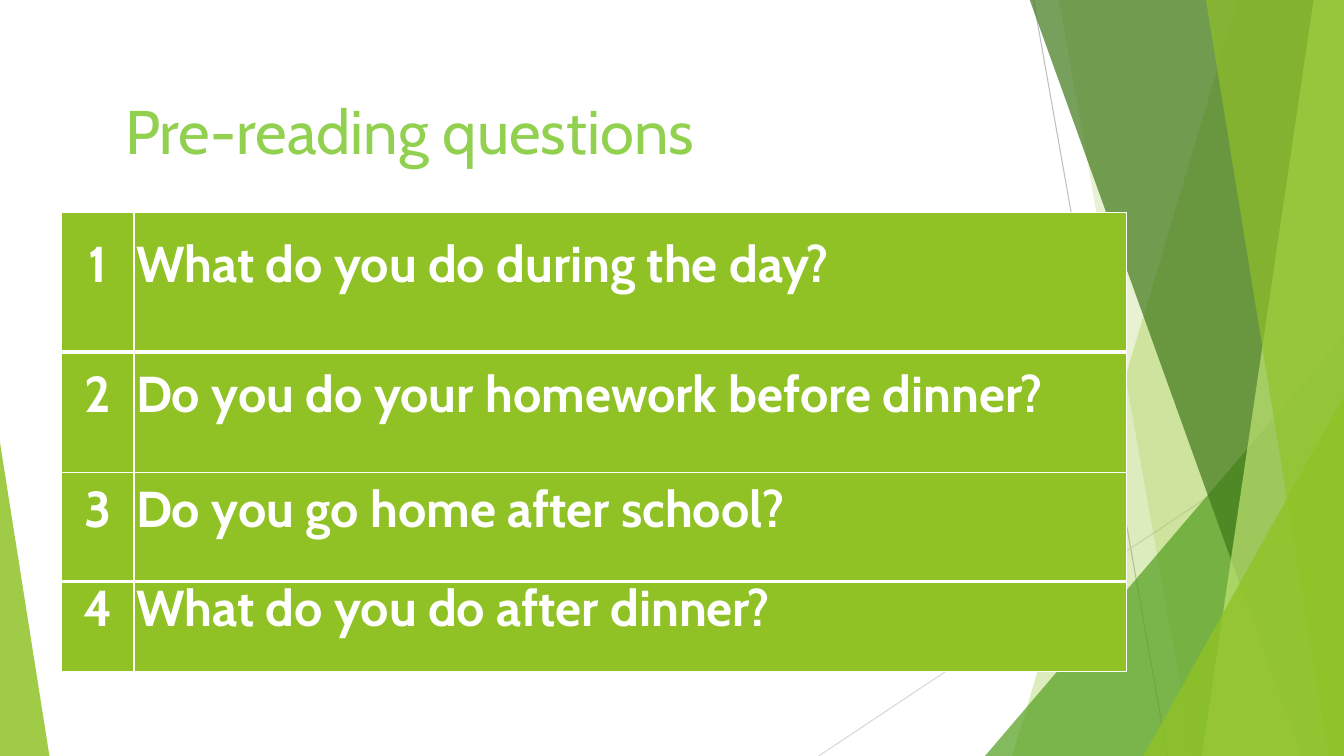
from dataclasses import dataclass

from lxml.etree import SubElement
from pptx import Presentation
from pptx.dml.color import RGBColor
from pptx.enum.shapes import MSO_CONNECTOR as Connector, MSO_SHAPE as Shape
from pptx.enum.text import MSO_ANCHOR as Anchor, PP_ALIGN as Align
from pptx.oxml.ns import qn
from pptx.util import Inches, Pt

WIDTH, HEIGHT = 13.33, 7.5


@dataclass(frozen=True)
class Theme:
    """Hold the colours, font and type sizes of the slide."""

    font: str = "Cabin"
    title_size: int = 44
    question_size: int = 36
    title: str = "92D050"
    lime: str = "90C226"
    leaf: str = "54A021"
    forest: str = "3F7819"
    pale: str = "C0E474"
    white: str = "FFFFFF"
    grey: str = "BFBFBF"
    light_grey: str = "D9D9D9"


class SlideBuilder:
    """Draw styled elements on the current slide."""

    def __init__(self, slide, theme):
        self.slide = slide
        self.shapes = slide.shapes
        self.theme = theme

    def add_text(self, paragraph, text, size, color, bold=False):
        run = paragraph.add_run()
        run.text = text
        run.font.name = self.theme.font
        run.font.size = Pt(size)
        run.font.bold = bold
        run.font.color.rgb = RGBColor.from_string(color)

    def title(self, text, left, top, width, height):
        heading = self.shapes.title
        heading.left, heading.top = Inches(left), Inches(top)
        heading.width, heading.height = Inches(width), Inches(height)
        frame = heading.text_frame
        frame.word_wrap = True
        frame.vertical_anchor = Anchor.TOP
        paragraph = frame.paragraphs[0]
        paragraph.alignment = Align.LEFT
        paragraph.line_spacing = 1.0
        self.add_text(paragraph, text, self.theme.title_size, self.theme.title)

    def hairline(self, start, end, color):
        line = self.shapes.add_connector(Connector.STRAIGHT, *map(Inches, start + end))
        line.line.color.rgb = RGBColor.from_string(color)
        line.line.width = Pt(0.75)
        SubElement(line._element.spPr, qn("a:effectLst"))

    def tint(self, facet, color, opacity):
        facet.shadow.inherit = False
        facet.line.fill.background()
        facet.fill.solid()
        facet.fill.fore_color.rgb = RGBColor.from_string(color)
        swatch = facet._element.spPr.find(qn("a:solidFill"))[0]
        SubElement(swatch, qn("a:alpha"), val=str(opacity * 1000))

    def band(self, top_x, bottom_x, color, opacity):
        top = -0.01
        corners = [(WIDTH, top), (WIDTH, HEIGHT), (bottom_x, HEIGHT)]
        outline = self.shapes.build_freeform(Inches(top_x), Inches(top))
        outline.add_line_segments([(Inches(x), Inches(y)) for x, y in corners])
        self.tint(outline.convert_to_shape(), color, opacity)

    def wedge(self, left, top, width, apex, color, opacity):
        wedge = self.shapes.add_shape(
            Shape.ISOSCELES_TRIANGLE, *map(Inches, (left, top, width, HEIGHT - top))
        )
        wedge.adjustments[0] = apex
        self.tint(wedge, color, opacity)

    def borders(self, cell, widths):
        properties = cell._tc.get_or_add_tcPr()
        for side, width in zip("LRTB", widths):
            border = SubElement(properties, qn(f"a:ln{side}"), w=str(Pt(width)))
            fill = SubElement(border, qn("a:solidFill"))
            SubElement(fill, qn("a:srgbClr"), val=self.theme.white)

    def cell(self, cell, text, align, widths):
        self.borders(cell, widths)
        cell.fill.solid()
        cell.fill.fore_color.rgb = RGBColor.from_string(self.theme.lime)
        cell.margin_left = cell.margin_right = Inches(0.02)
        cell.margin_top = cell.margin_bottom = 0
        cell.vertical_anchor = Anchor.MIDDLE
        paragraph = cell.text_frame.paragraphs[0]
        paragraph.alignment = align
        paragraph.line_spacing = Pt(18)
        self.add_text(paragraph, text, self.theme.question_size, self.theme.white, bold=True)

    def numbered_table(self, left, top, columns, heights, rules, questions):
        frame = self.shapes.add_table(
            len(questions), len(columns), Inches(left), Inches(top),
            Inches(sum(columns)), Inches(sum(heights)),
        )
        table = frame.table
        for column, width in zip(table.columns, columns):
            column.width = Inches(width)
        for index, question in enumerate(questions):
            table.rows[index].height = Inches(heights[index])
            widths = (1, 1, rules[index], rules[index + 1])
            self.cell(table.cell(index, 0), str(index + 1), Align.CENTER, widths)
            self.cell(table.cell(index, 1), question, Align.LEFT, widths)


def main():
    deck = Presentation()
    deck.slide_width, deck.slide_height = Inches(WIDTH), Inches(HEIGHT)
    theme = Theme()
    page = SlideBuilder(deck.slides.add_slide(deck.slide_layouts[5]), theme)

    page.hairline((10.25, 0), (11.58, HEIGHT), theme.grey)
    page.hairline((WIDTH, 4.03), (8.12, HEIGHT), theme.light_grey)
    page.band(12.28, 10.04, theme.lime, 30)
    page.band(10.5, 11.83, theme.lime, 20)
    page.wedge(9.77, 3.33, 3.56, 1, theme.leaf, 72)
    page.band(10.21, 12.91, theme.forest, 70)
    page.band(13.03, 11.92, theme.pale, 70)
    page.band(11.96, 13.18, theme.lime, 65)
    page.wedge(11.34, 3.93, 1.99, 1, theme.lime, 80)
    page.wedge(0, 4.39, 0.49, 0, theme.lime, 85)

    page.numbered_table(
        0.61, 2.11,
        columns=[0.72, 9.84],
        heights=[1.38, 1.2, 1.08, 0.89],
        rules=[1, 3, 1, 3, 1],
        questions=[
            "What do you do during the day?",
            "Do you do your homework before dinner?",
            "Do you go home after school?",
            "What do you do after dinner?",
        ],
    )
    page.title("Pre-reading questions", 1.14, 0.87, 7.75, 0.84)
    deck.save("out.pptx")


if __name__ == "__main__":
    main()
